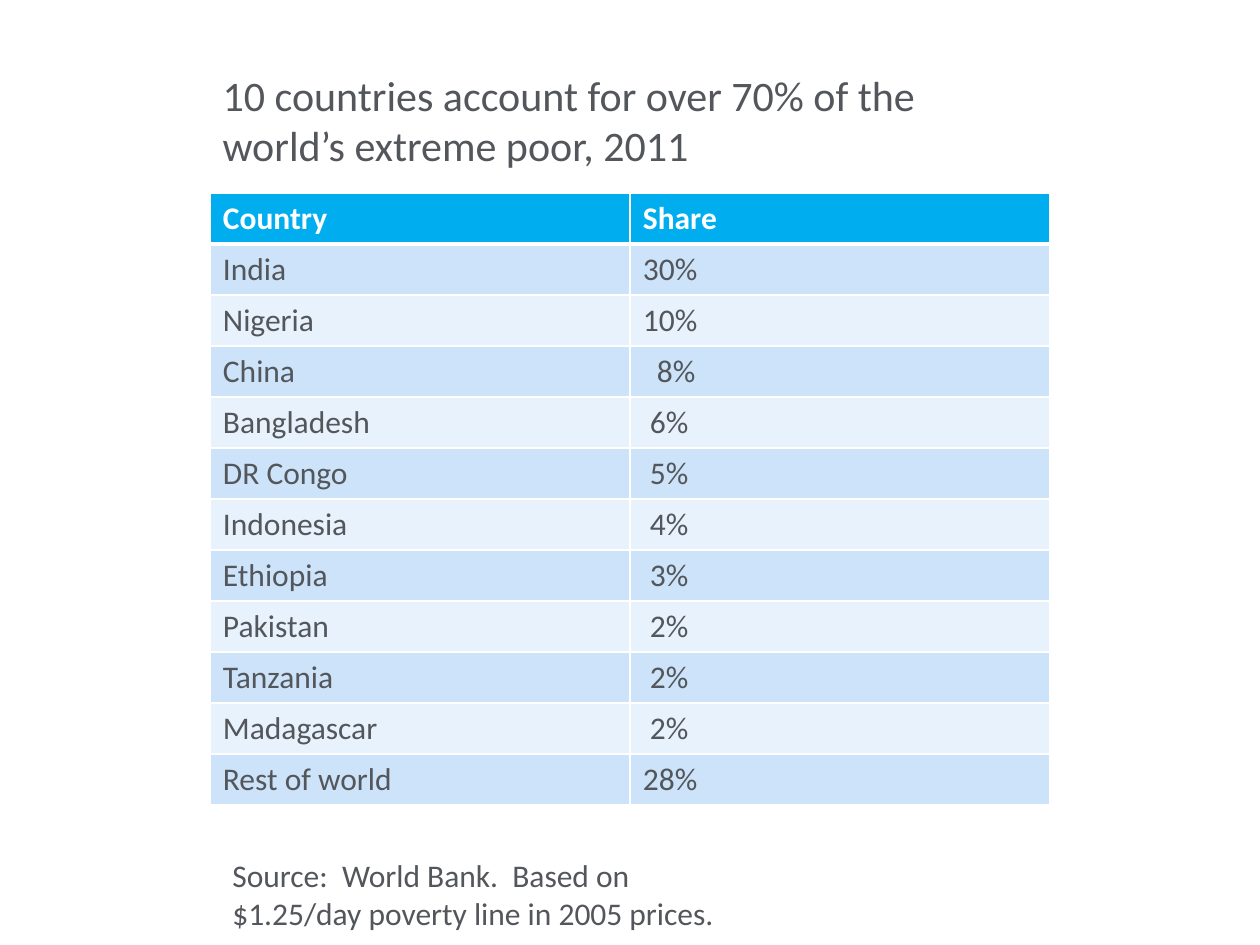
from lxml.etree import SubElement
from pptx import Presentation
from pptx.dml.color import RGBColor
from pptx.enum.text import MSO_ANCHOR, MSO_AUTO_SIZE, PP_ALIGN
from pptx.oxml.ns import qn
from pptx.util import Emu, Pt

EMU_PER_PX = 914400 / 126
FONT = "Calibri"
WHITE, GREY, BLUE = "FFFFFF", "53565A", "00AEEF"
BANDS = ("CCE3F9", "E7F2FC")
ROW_HEIGHT, COLUMN_WIDTH = 51, 420
CELL_MARGIN, INDENT_STEP = 13, 7

TITLE = "10 countries account for over 70% of the world’s extreme poor, 2011"
SOURCE = "Source:  World Bank.  Based on $1.25/day poverty line in 2005 prices."
ROWS = [
    ("Country", "Share", 0),
    ("India", "30%", 0),
    ("Nigeria", "10%", 0),
    ("China", "8%", 2),
    ("Bangladesh", "6%", 1),
    ("DR Congo", "5%", 1),
    ("Indonesia", "4%", 1),
    ("Ethiopia", "3%", 1),
    ("Pakistan", "2%", 1),
    ("Tanzania", "2%", 1),
    ("Madagascar", "2%", 1),
    ("Rest of world", "28%", 0),
]


def px(length):
    """Turn pixels into EMU."""
    return Emu(round(length * EMU_PER_PX))


def color(hex_value):
    """Turn a hex string into a colour."""
    return RGBColor.from_string(hex_value)


def write_text(text_frame, text, size=18, font_color=GREY, bold=False):
    """Write one left-aligned paragraph with its format."""
    paragraph = text_frame.paragraphs[0]
    paragraph.alignment = PP_ALIGN.LEFT
    run = paragraph.add_run()
    run.text = text
    run.font.name = FONT
    run.font.size = Pt(size)
    run.font.bold = bold
    run.font.color.rgb = color(font_color)


def place_text(shape, box, text, **text_format):
    """Place a text shape and fill it from the top."""
    shape.left, shape.top, shape.width, shape.height = map(px, box)
    text_frame = shape.text_frame
    text_frame.word_wrap = True
    text_frame.auto_size = MSO_AUTO_SIZE.SHAPE_TO_FIT_TEXT
    text_frame.vertical_anchor = MSO_ANCHOR.TOP
    write_text(text_frame, text, **text_format)


def set_borders(cell, row_index):
    """Draw white cell borders, heavier between header and body."""
    properties = cell._tc.get_or_add_tcPr()
    for side in "LRTB":
        heavy = (row_index, side) in ((0, "B"), (1, "T"))
        line = SubElement(properties, qn(f"a:ln{side}"), w=str(Pt(3 if heavy else 1)))
        fill = SubElement(line, qn("a:solidFill"))
        SubElement(fill, qn("a:srgbClr"), val=WHITE)


def format_cell(cell, row_index, text, indent):
    """Give a cell its borders, fill, indent and text."""
    header = row_index == 0
    set_borders(cell, row_index)
    cell.fill.solid()
    cell.fill.fore_color.rgb = color(BLUE if header else BANDS[(row_index - 1) % 2])
    cell.margin_left = px(CELL_MARGIN + indent * INDENT_STEP)
    write_text(cell.text_frame, text, font_color=WHITE if header else GREY, bold=header)


def add_share_table(slide, left, top):
    """Add the table of countries and their shares."""
    size = (2 * COLUMN_WIDTH, len(ROWS) * ROW_HEIGHT)
    table = slide.shapes.add_table(len(ROWS), 2, *map(px, (left, top, *size))).table
    for row_index, (country, share, indent) in enumerate(ROWS):
        table.rows[row_index].height = px(ROW_HEIGHT)
        format_cell(table.cell(row_index, 0), row_index, country, 0)
        format_cell(table.cell(row_index, 1), row_index, share, indent)


def main():
    """Build and save the slide."""
    presentation = Presentation()
    presentation.slide_width, presentation.slide_height = px(1260), px(945)
    slide = presentation.slides.add_slide(presentation.slide_layouts[5])
    add_share_table(slide, 210, 193)
    place_text(slide.shapes.title, (210, 63, 840, 115), TITLE, size=24)
    source_box = slide.shapes.add_textbox(0, 0, 0, 0)
    place_text(source_box, (220, 850, 557, 89), SOURCE)
    presentation.save("out.pptx")


if __name__ == "__main__":
    main()
